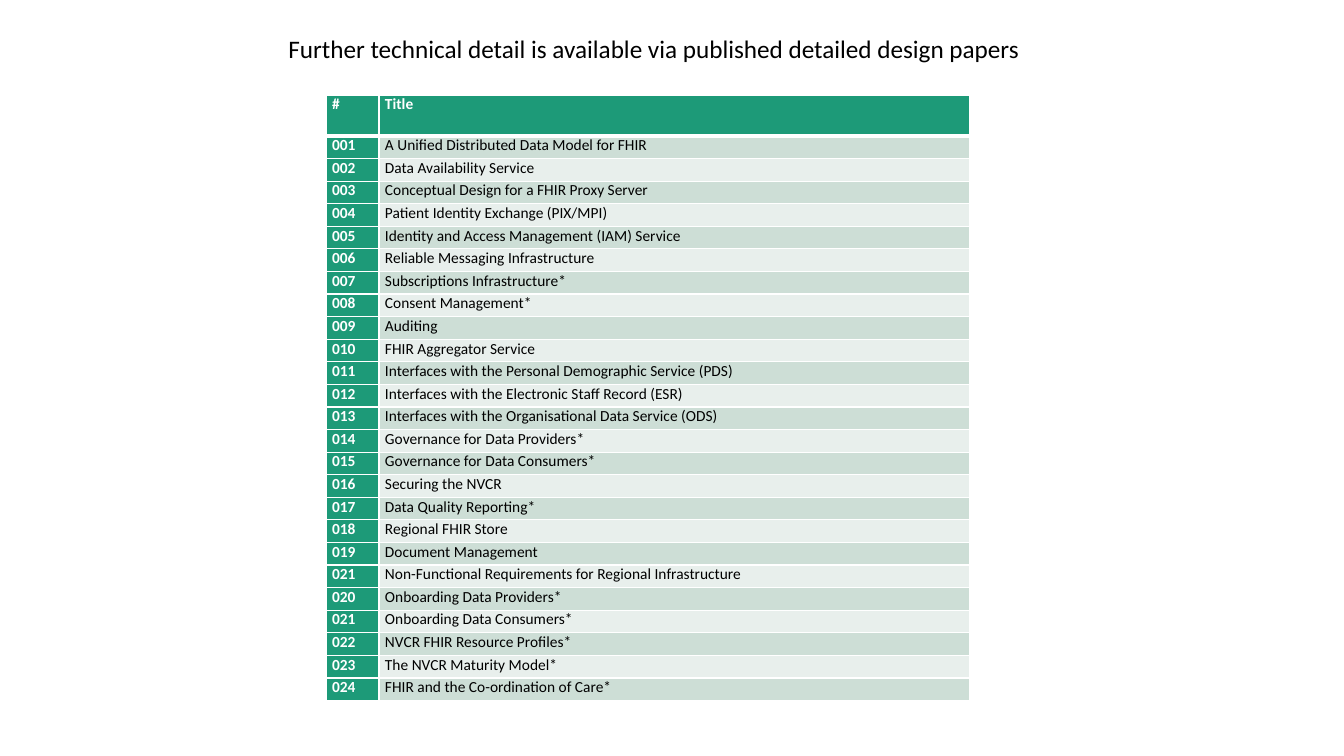
import pptx
import pptx.dml.color
import pptx.enum.text
import pptx.oxml
import pptx.oxml.ns
import pptx.util

RGBColor = pptx.dml.color.RGBColor

HEADING = "Further technical detail is available via published detailed design papers"
HEADER = ("#", "Title")
PAPERS = [
    ("001", "A Unified Distributed Data Model for FHIR"),
    ("002", "Data Availability Service"),
    ("003", "Conceptual Design for a FHIR Proxy Server"),
    ("004", "Patient Identity Exchange (PIX/MPI)"),
    ("005", "Identity and Access Management (IAM) Service"),
    ("006", "Reliable Messaging Infrastructure"),
    ("007", "Subscriptions Infrastructure*"),
    ("008", "Consent Management*"),
    ("009", "Auditing"),
    ("010", "FHIR Aggregator Service"),
    ("011", "Interfaces with the Personal Demographic Service (PDS)"),
    ("012", "Interfaces with the Electronic Staff Record (ESR)"),
    ("013", "Interfaces with the Organisational Data Service (ODS)"),
    ("014", "Governance for Data Providers*"),
    ("015", "Governance for Data Consumers*"),
    ("016", "Securing the NVCR"),
    ("017", "Data Quality Reporting*"),
    ("018", "Regional FHIR Store"),
    ("019", "Document Management"),
    ("021", "Non-Functional Requirements for Regional Infrastructure"),
    ("020", "Onboarding Data Providers*"),
    ("021", "Onboarding Data Consumers*"),
    ("022", "NVCR FHIR Resource Profiles*"),
    ("023", "The NVCR Maturity Model*"),
    ("024", "FHIR and the Co-ordination of Care*"),
]

FONT = "Calibri"
GREEN = RGBColor(0x1D, 0x9A, 0x78)
BANDS = (RGBColor(0xE8, 0xEF, 0xEC), RGBColor(0xCD, 0xDE, 0xD6))
WHITE = RGBColor(0xFF, 0xFF, 0xFF)
BLACK = RGBColor(0x00, 0x00, 0x00)

SLIDE_SIZE = (1344, 756)
HEADING_BOX = (245, 28, 818, 40)
TABLE_LEFT, TABLE_TOP = 326, 95
COLUMN_WIDTHS = (53, 591)
HEADER_HEIGHT, BODY_HEIGHT = 41, 565
CELL_MARGIN = 6


def px(length):
    return pptx.util.Emu(round(length * 914400 / 100.8))


def style_text(frame, size, color, bold=False):
    for para in frame.paragraphs:
        for span in para.runs:
            span.font.name = FONT
            span.font.size = pptx.util.Pt(size)
            span.font.color.rgb = color
            span.font.bold = bold


def add_borders(cell, bottom_width):
    """Draw white cell edges; must run before the fill is set."""
    properties = cell._tc.get_or_add_tcPr()
    widths = {"lnL": 1, "lnR": 1, "lnT": 1, "lnB": bottom_width}
    for edge, width in widths.items():
        properties.append(pptx.oxml.parse_xml(
            f'<a:{edge} {pptx.oxml.ns.nsdecls("a")} w="{pptx.util.Pt(width)}">'
            f'<a:solidFill><a:srgbClr val="{WHITE}"/></a:solidFill></a:{edge}>'))


def add_heading(page):
    title = page.shapes.title
    title.left, title.top, title.width, title.height = map(px, HEADING_BOX)
    frame = title.text_frame
    frame.text = HEADING
    frame.word_wrap = True
    frame.auto_size = pptx.enum.text.MSO_AUTO_SIZE.NONE
    frame.vertical_anchor = pptx.enum.text.MSO_ANCHOR.TOP
    frame.paragraphs[0].alignment = pptx.enum.text.PP_ALIGN.CENTER
    style_text(frame, 18, BLACK)


def add_papers_table(page):
    rows = [HEADER] + PAPERS
    table = page.shapes.add_table(
        len(rows), len(HEADER), px(TABLE_LEFT), px(TABLE_TOP),
        px(sum(COLUMN_WIDTHS)), px(HEADER_HEIGHT + BODY_HEIGHT)).table
    table.first_col = True
    for column, width in zip(table.columns, COLUMN_WIDTHS):
        column.width = px(width)
    for row_index, texts in enumerate(rows):
        is_header = row_index == 0
        table.rows[row_index].height = px(
            HEADER_HEIGHT if is_header else BODY_HEIGHT / len(PAPERS))
        for column_index, text in enumerate(texts):
            on_green = is_header or column_index == 0
            cell = table.cell(row_index, column_index)
            cell.margin_left = cell.margin_right = px(CELL_MARGIN)
            cell.margin_top = cell.margin_bottom = 0
            add_borders(cell, 3 if is_header else 1)
            cell.fill.solid()
            cell.fill.fore_color.rgb = GREEN if on_green else BANDS[row_index % 2]
            cell.text_frame.text = text
            style_text(cell.text_frame, 11, WHITE if on_green else BLACK, on_green)


def main():
    deck = pptx.Presentation()
    deck.slide_width, deck.slide_height = map(px, SLIDE_SIZE)
    page = deck.slides.add_slide(deck.slide_layouts.get_by_name("Title Only"))
    add_papers_table(page)
    add_heading(page)
    deck.save("out.pptx")


if __name__ == "__main__":
    main()
